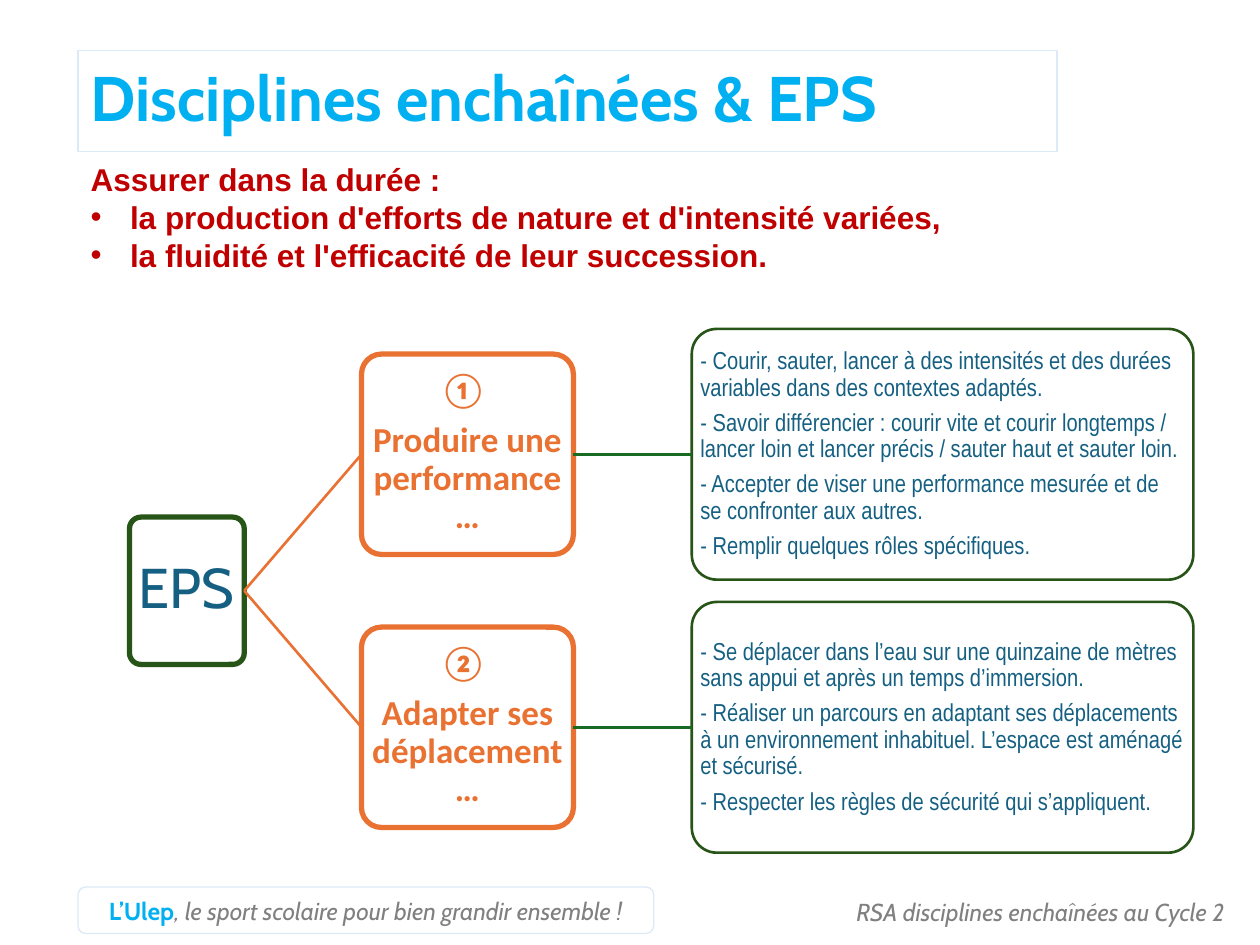
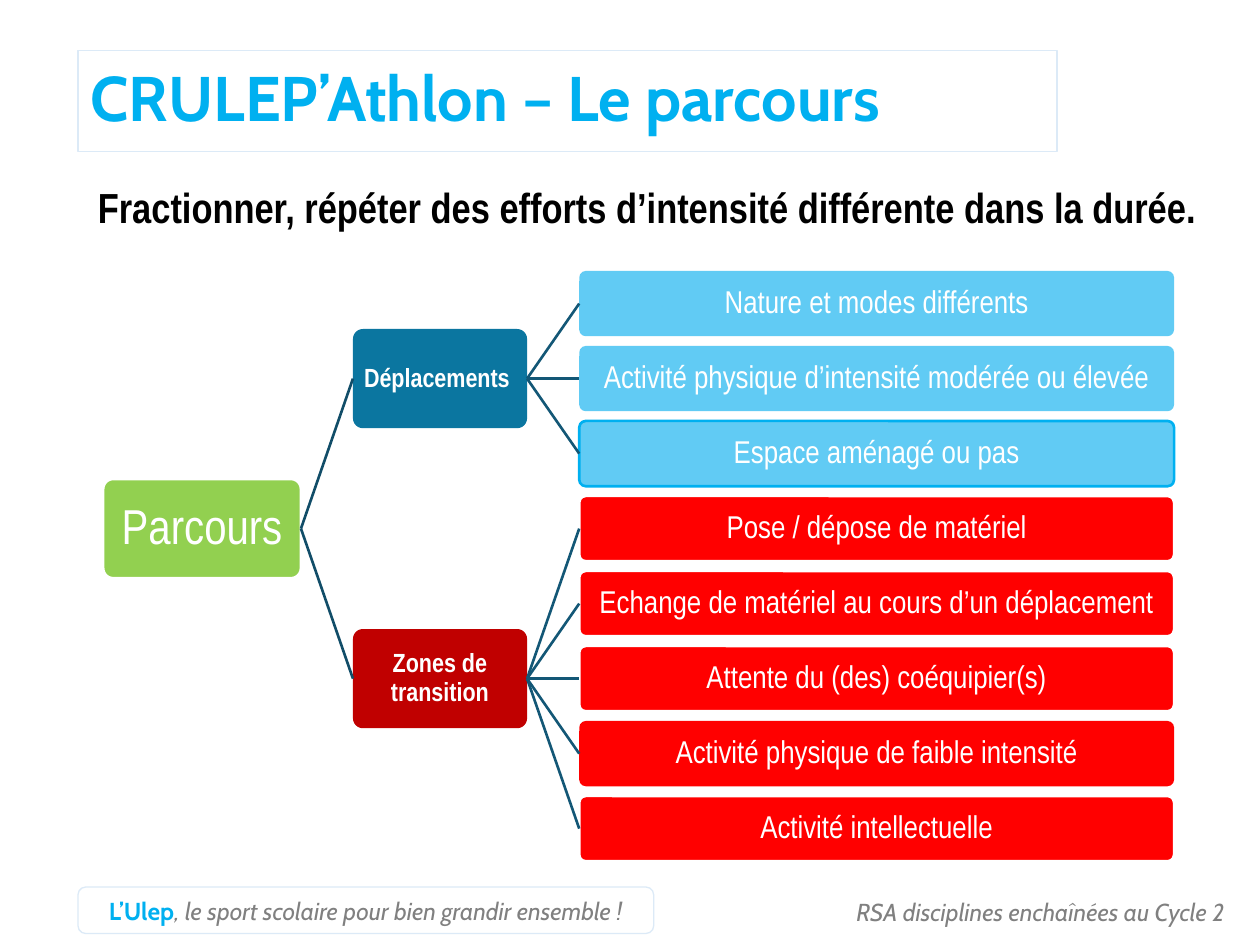
from dataclasses import dataclass, replace
from lxml.etree import SubElement
from pptx import Presentation
from pptx.dml.color import RGBColor
from pptx.enum.shapes import MSO_CONNECTOR, MSO_SHAPE
from pptx.enum.text import MSO_ANCHOR, MSO_AUTO_SIZE, PP_ALIGN
from pptx.oxml.ns import qn
from pptx.util import Pt


@dataclass(frozen=True)
class Face:
    font: str
    size: int
    color: str
    bold: bool = False
    slant: bool = False


class Theme:
    sky, pale, grey = "00B0F0", "DCEAF7", "808080"
    white, black, teal = "FFFFFF", "000000", "156082"
    orange, moss, green = "E97132", "275417", "196B24"
    lime, blue, light = "92D050", "0B76A0", "61CBF4"
    dark, red, navy, steel = "C00000", "FF0000", "114D68", "135776"
    title = Face("Cabin", 36, sky, bold=True)
    brand = Face("Cabin", 14, sky, bold=True)
    foot = Face("Cabin", 14, grey, slant=True)
    goal = Face("Arial", 18, dark, bold=True)
    lead = Face("Arial Narrow", 24, black, bold=True)
    eps = Face("Cabin", 32, teal)
    skill = Face("Calibri", 20, orange, bold=True)
    note = Face("Arial Narrow", 14, teal)
    start = Face("Arial Narrow", 28, white)
    stage = Face("Arial Narrow", 15, white, bold=True)
    item = Face("Arial Narrow", 18, white)


LEFT, MID, RIGHT = PP_ALIGN.LEFT, PP_ALIGN.CENTER, PP_ALIGN.RIGHT

# Shared places: left, top, width, height
TITLE = (44.6, 28.8, 559.4, 57.6)
PILL = (44.6, 506.9, 329, 26.6)
FOOT = (415.4, 509, 291.6, 24.5)
SLOGAN = [("L’Ulep", Theme.brand),
          (", le sport scolaire pour bien grandir ensemble !", Theme.foot)]
EVENT = [("RSA disciplines enchaînées au Cycle 2", Theme.foot)]


@dataclass(frozen=True)
class Level:
    left: float
    width: float
    height: float
    face: Face
    align: PP_ALIGN = MID
    line: str = None
    weight: float = 1.5
    fill: str = None


@dataclass(frozen=True)
class Node:
    text: tuple
    kids: tuple = ()
    look: dict = None


def leaf(*text, **look):
    return Node(text, look=look)


# Slide content
WHITE = {"fill": Theme.red, "line": Theme.white}
EPS = Node(("EPS",), (
    Node(("① ", "Produire une performance…"), (leaf(
        "- Courir, sauter, lancer à des intensités et des durées variables dans des contextes adaptés.",
        "- Savoir différencier : courir vite et courir longtemps / lancer loin et lancer précis / sauter haut et sauter loin.",
        "- Accepter de viser une performance mesurée et de se confronter aux autres.",
        "- Remplir quelques rôles spécifiques."),)),
    Node(("② ", "Adapter ses déplacement…"), (leaf(
        "- Se déplacer dans l’eau sur une quinzaine de mètres sans appui et après un temps d’immersion.",
        "- Réaliser un parcours en adaptant ses déplacements à un environnement inhabituel. L’espace est aménagé et sécurisé.",
        "- Respecter les règles de sécurité qui s’appliquent."),)),
))
COURSE = Node(("Parcours",), (
    Node(("Déplacements ",), (
        leaf("Nature et modes différents"),
        leaf("Activité physique d’intensité modérée ou élevée"),
        leaf("Espace aménagé ou pas", line=Theme.sky),
    ), {"fill": Theme.blue}),
    Node(("Zones de transition",), (
        leaf("Pose / dépose de matériel", **WHITE),
        leaf("Echange de matériel au cours d’un déplacement", **WHITE),
        leaf("Attente du (des) coéquipier(s)", **WHITE),
        leaf("Activité physique de faible intensité", fill=Theme.red),
        leaf("Activité intellectuelle", **WHITE),
    ), {"fill": Theme.dark}),
))
SLIDES = [
    {"title": "Disciplines enchaînées & EPS",
     "body": ["Assurer dans la durée :",
              "• la production d'efforts de nature et d'intensité variées,",
              "• la fluidité et l'efficacité de leur succession."],
     "face": Theme.goal, "align": LEFT, "box": (44.6, 87.8, 645.8, 72.7),
     "tree": EPS, "first": 259.6, "pitch": 156,
     "links": (Theme.orange, Theme.green),
     "levels": (
         Level(74, 65.6, 84.2, Theme.eps, line=Theme.moss, weight=3),
         Level(206.6, 121.1, 114.5, Theme.skill, line=Theme.orange, weight=3),
         Level(395.3, 286.6, 143.3, Theme.note, LEFT, Theme.moss))},
    {"title": "CRULEP’Athlon – Le parcours",
     "body": ["Fractionner, répéter des efforts d’intensité différente dans la durée. "],
     "face": Theme.lead, "align": MID, "box": (44.6, 100.1, 655.9, 36),
     "tree": COURSE, "first": 173.5, "pitch": 42.86,
     "links": (Theme.navy, Theme.steel),
     "levels": (
         Level(59, 113, 56.7, Theme.start, line=Theme.white, fill=Theme.lime),
         Level(201.7, 99.5, 56.7, Theme.stage),
         Level(331, 339.9, 37.3, Theme.item, fill=Theme.light))},
]


# Text and line helpers
def place(shape, box):
    shape.left, shape.top, shape.width, shape.height = map(Pt, box)


def write(frame, paras, align, gap=0, lead=1.0, pad=None):
    frame.word_wrap = True
    frame.auto_size = MSO_AUTO_SIZE.NONE
    if pad is not None:
        frame.margin_left = frame.margin_right = Pt(pad)
        frame.margin_top = frame.margin_bottom = Pt(pad)
    for i, runs in enumerate(paras):
        para = frame.add_paragraph() if i else frame.paragraphs[0]
        para.alignment = align
        para.line_spacing = lead
        para.space_before = Pt(gap if i else 0)
        for text, face in runs:
            run = para.add_run()
            run.text = text
            font = run.font
            font.name, font.size = face.font, Pt(face.size)
            font.bold, font.italic = face.bold, face.slant
            font.color.rgb = RGBColor.from_string(face.color)


def outline(line, color, weight):
    if color:
        line.color.rgb = RGBColor.from_string(color)
        line.width = Pt(weight)
    else:
        line.fill.background()


def round_box(slide, box, fill, line, weight):
    shape = slide.shapes.add_shape(MSO_SHAPE.ROUNDED_RECTANGLE, *map(Pt, box))
    shape.shadow.inherit = False
    if fill:
        shape.fill.solid()
        shape.fill.fore_color.rgb = RGBColor.from_string(fill)
    else:
        shape.fill.background()
    outline(shape.line, line, weight)
    return shape


def bullet(para, mark):
    props = para._p.get_or_add_pPr()
    step = Pt(22.5) if mark else 0
    props.set("marL", str(step))
    props.set("indent", str(-step))
    if mark:
        SubElement(props, qn("a:buChar")).set("char", mark)
    else:
        SubElement(props, qn("a:buNone"))


# Tree: each parent sits at the mean height of its children
def link(slide, start, end, color):
    wire = slide.shapes.add_connector(MSO_CONNECTOR.STRAIGHT, 0, 0, 0, 0)
    wire.begin_connect(start, 3)
    wire.end_connect(end, 1)
    outline(wire.line, color, 1.5)
    SubElement(wire.element.spPr, qn("a:effectLst"))


def grow(slide, plan, node, rows, depth=0):
    kids = [grow(slide, plan, kid, rows, depth + 1) for kid in node.kids]
    mid = sum(y for _, y in kids) / len(kids) if kids else next(rows)
    level = replace(plan["levels"][depth], **(node.look or {}))
    box = (level.left, mid - level.height / 2, level.width, level.height)
    shape = round_box(slide, box, level.fill, level.line, level.weight)
    shape.adjustments[0] = 0.1
    write(shape.text_frame, [[(text, level.face)] for text in node.text],
          level.align, gap=0.35 * level.face.size, lead=0.9, pad=0.7)
    shape.text_frame.vertical_anchor = MSO_ANCHOR.MIDDLE
    for kid, _ in kids:
        link(slide, shape, kid, plan["links"][depth])
    return shape, mid


# Footers go on the master, so every slide shows them
def add_foot(deck, slide):
    pill = round_box(slide, PILL, None, Theme.pale, 0.75)
    write(pill.text_frame, [SLOGAN], MID)
    event = slide.shapes.add_textbox(*map(Pt, FOOT))
    write(event.text_frame, [EVENT], RIGHT)
    for i, shape in enumerate((pill, event)):
        shape.element.nvSpPr.cNvPr.set("id", str(20 + i))
        deck.slide_master.shapes.element.append(shape.element)


def build(deck, plan):
    slide = deck.slides.add_slide(deck.slide_layouts[1])
    title, body = slide.placeholders
    place(title, TITLE)
    outline(title.line, Theme.pale, 0.75)
    write(title.text_frame, [[(plan["title"], Theme.title)]], LEFT, lead=0.9)
    title.text_frame.vertical_anchor = MSO_ANCHOR.MIDDLE
    place(body, plan["box"])
    texts = plan["body"]
    write(body.text_frame,
          [[(text.removeprefix("• "), plan["face"])] for text in texts], plan["align"])
    for para, text in zip(body.text_frame.paragraphs, texts):
        bullet(para, "•" if text.startswith("•") else None)
    rows = (plan["first"] + plan["pitch"] * i for i in range(20))
    grow(slide, plan, plan["tree"], rows)
    return slide


def main():
    deck = Presentation()
    deck.slide_width, deck.slide_height = Pt(720), Pt(540)
    pages = [build(deck, plan) for plan in SLIDES]
    add_foot(deck, pages[0])
    deck.save("out.pptx")


if __name__ == "__main__":
    main()
